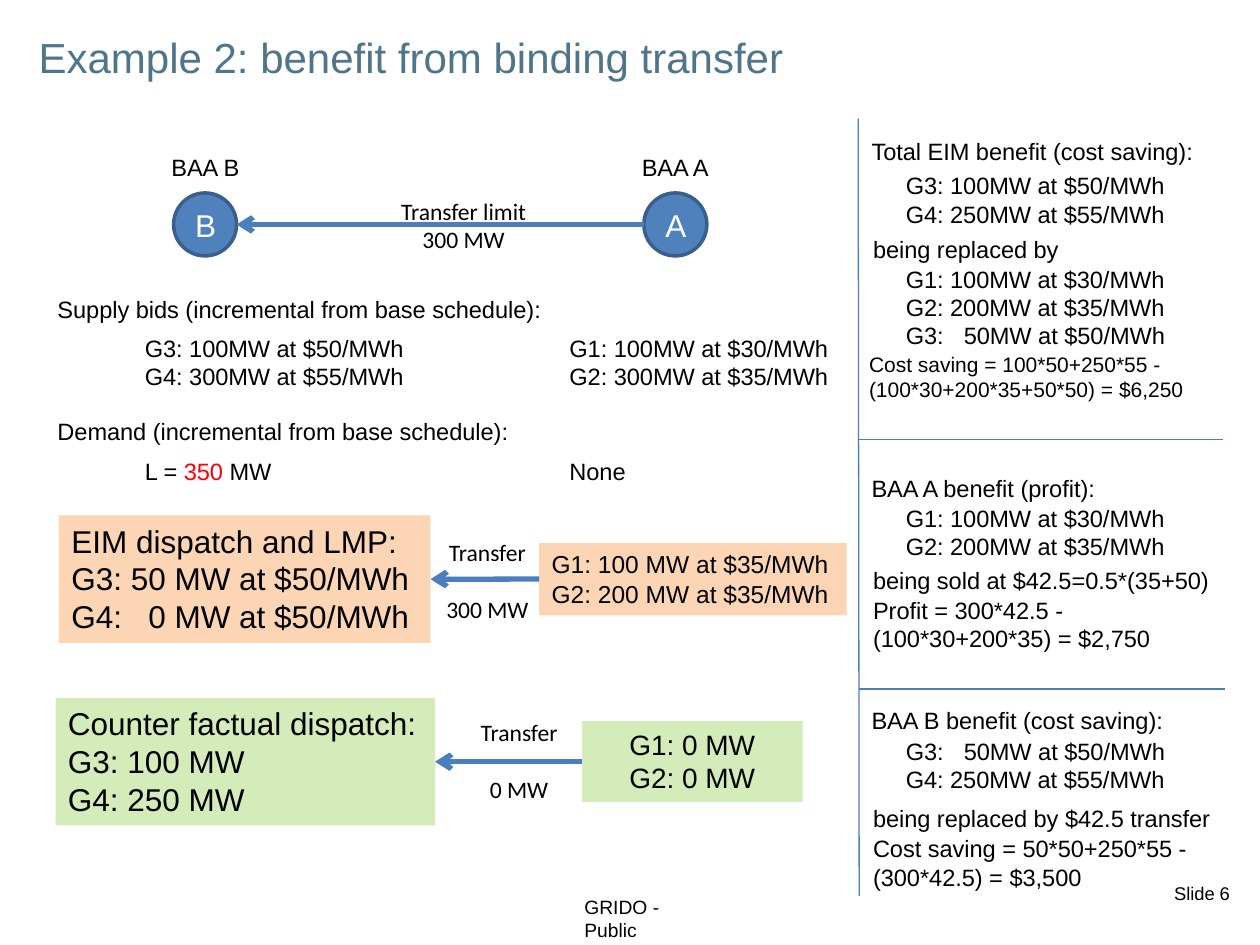
from dataclasses import dataclass

from lxml import etree
from pptx import Presentation
from pptx.dml.color import RGBColor
from pptx.enum.shapes import MSO_CONNECTOR, MSO_SHAPE
from pptx.enum.text import MSO_ANCHOR, MSO_AUTO_SIZE, PP_ALIGN
from pptx.oxml.ns import qn
from pptx.util import Cm, Pt

LEFT, CENTER = PP_ALIGN.LEFT, PP_ALIGN.CENTER
TOP, MIDDLE = MSO_ANCHOR.TOP, MSO_ANCHOR.MIDDLE
GROW = MSO_AUTO_SIZE.SHAPE_TO_FIT_TEXT
RECT, OVAL = MSO_SHAPE.RECTANGLE, MSO_SHAPE.OVAL
STRAIGHT = MSO_CONNECTOR.STRAIGHT
LEFT_SIDE, RIGHT_SIDE = 1, 3

BLACK = RGBColor(0x00, 0x00, 0x00)
WHITE = RGBColor(0xFF, 0xFF, 0xFF)
RED = RGBColor(0xFF, 0x00, 0x00)
TITLE_COLOR = RGBColor(0x4F, 0x75, 0x8B)
NODE_FILL = RGBColor(0x4F, 0x81, 0xBD)
NODE_EDGE = RGBColor(0x3A, 0x5F, 0x8C)
LINE_COLOR = RGBColor(0x4B, 0x7E, 0xBC)
ORANGE = RGBColor(0xFC, 0xD5, 0xB5)
GREEN = RGBColor(0xD3, 0xEC, 0xB9)

BAA_B_X, BAA_A_X = 2.67, 11.23
HEAD_X, NOTE_X, BID_X = 17.32, 17.35, 18.01
ONE_LINE, TWO_LINES = 0.84, 1.42
NODE_SIZE, NODE_TOP = 1.27, 3.89


@dataclass
class Label:
    """A block of text; places in cm, one paragraph per line of text."""
    text: str
    x: float
    y: float
    w: float
    h: float = ONE_LINE
    size: float = 13.5
    align: PP_ALIGN = LEFT
    font: str = "Arial"
    color: RGBColor = BLACK
    red: str = ""
    gap: float = 0
    tab: float = 1.17
    wrap: bool = True


@dataclass
class Dispatch:
    baa_b: Label
    baa_a: Label
    transfer: Label
    fill: RGBColor


def bids(text: str, x: float, y: float, h: float = TWO_LINES) -> Label:
    return Label(text, x, y, 6.2, h)


def transfer(amount: str, x: float, y: float, w: float) -> Label:
    return Label(f"Transfer\n{amount}", x, y, w, 1.98, align=CENTER,
                 font="Calibri", gap=16.5)


LABELS = [
    Label("GRIDO - Public", 11.53, 17.93, 3.15, 0.74, 11, wrap=False),
    Label("Slide 6", 23.42, 17.65, 1.98, 0.74, 10.5, wrap=False),
    Label("Example 2: benefit from binding transfer", 0.53, 0.51, 16.31, 1.27,
          24, color=TITLE_COLOR),
    Label("Transfer limit 300 MW", 7.54, 3.84, 3.61, TWO_LINES,
          align=CENTER, font="Calibri"),
    Label("BAA B", 2.39, 2.95, 3.5, align=CENTER),
    Label("BAA A", 11.86, 2.95, 3.5, align=CENTER),
    Label("Supply bids (incremental from base schedule):", 0.91, 5.82, 11.33),
    bids("G3: 100MW at $50/MWh\nG4: 300MW at $55/MWh", BAA_B_X, 6.6),
    bids("G1: 100MW at $30/MWh\nG2: 300MW at $35/MWh", BAA_A_X, 6.6),
    Label("Demand (incremental from base schedule):", 0.91, 8.28, 10.72),
    Label("L = 350 MW", BAA_B_X, 9.09, 7.14, red="350"),
    Label("None", BAA_A_X, 9.09, 4.11),
    # Total benefit
    Label("Total EIM benefit (cost saving):", HEAD_X, 2.64, 7.01),
    bids("G3: 100MW at $50/MWh\nG4: 250MW at $55/MWh", BID_X, 3.33),
    Label("being replaced by", NOTE_X, 4.62, 7.01),
    bids("G1: 100MW at $30/MWh\nG2: 200MW at $35/MWh\nG3:\t50MW at $50/MWh",
         BID_X, 5.21, 2.57),
    Label("Cost saving = 100*50+250*55 -(100*30+200*35+50*50) = $6,250",
          17.27, 6.96, 7.57, 1.27, 12),
    # Benefit of BAA A
    Label("BAA A benefit (profit):", HEAD_X, 9.42, 7.01),
    bids("G1: 100MW at $30/MWh\nG2: 200MW at $35/MWh", BID_X, 10.03),
    Label("being sold at $42.5=0.5*(35+50)", NOTE_X, 11.28, 7.82),
    Label("Profit = 300*42.5 -(100*30+200*35) = $2,750",
          NOTE_X, 11.89, 7.01, TWO_LINES),
    # Benefit of BAA B
    Label("BAA B benefit (cost saving):", HEAD_X, 14.1, 7.01),
    bids("G3:\t50MW at $50/MWh\nG4: 250MW at $55/MWh", BID_X, 14.73),
    Label("being replaced by $42.5 transfer", NOTE_X, 16.08, 7.54),
    Label("Cost saving = 50*50+250*55 -(300*42.5) = $3,500",
          NOTE_X, 16.69, 7.01, TWO_LINES),
]

DISPATCHES = [
    Dispatch(
        Label("EIM dispatch and LMP:\nG3: 50 MW at $50/MWh\n"
              "G4:\t0 MW at $50/MWh", 1.19, 10.39, 7.49, 2.57, 18, tab=1.55),
        Label("G1: 100 MW at $35/MWh\nG2: 200 MW at $35/MWh",
              10.87, 10.95, 6.2, 1.45, 14),
        transfer("300 MW", 8.53, 10.72, 2.59), ORANGE),
    Dispatch(
        Label("Counter factual dispatch:\nG3: 100 MW\nG4: 250 MW",
              1.12, 14.07, 7.65, 2.57, 18),
        Label("G1: 0 MW\nG2: 0 MW", 11.73, 14.54, 4.45, 1.63, 16, CENTER),
        transfer("0 MW", 9.27, 14.35, 2.39), GREEN),
]

DIVIDERS = [
    (17.3, 2.39, 17.32, 18.06),
    (17.3, 8.86, 24.66, 8.86),
    (17.32, 13.89, 24.69, 13.89),
]


def write(tf, label: Label) -> None:
    tf.word_wrap = label.wrap
    for i, line in enumerate(label.text.split("\n")):
        p = tf.paragraphs[0] if i == 0 else tf.add_paragraph()
        p.alignment = label.align
        if i and label.gap:
            p.space_before = Pt(label.gap)
        if "\t" in line:
            tabs = etree.SubElement(p._p.get_or_add_pPr(), qn("a:tabLst"))
            etree.SubElement(tabs, qn("a:tab"), pos=str(Cm(label.tab)),
                             algn="l")
        parts = line.partition(label.red) if label.red else (line,)
        for part in parts:
            r = p.add_run()
            r.text = part
            r.font.name = label.font
            r.font.size = Pt(label.size)
            r.font.color.rgb = RED if part == label.red else label.color


def frame(label: Label) -> tuple[Cm, Cm, Cm, Cm]:
    return Cm(label.x), Cm(label.y), Cm(label.w), Cm(label.h)


def add_label(s, label: Label) -> None:
    tf = s.shapes.add_textbox(*frame(label)).text_frame
    tf.auto_size = GROW
    write(tf, label)


def add_shape(s, kind, label: Label, fill: RGBColor, anchor):
    sp = s.shapes.add_shape(kind, *frame(label))
    sp.shadow.inherit = False
    sp.fill.solid()
    sp.fill.fore_color.rgb = fill
    sp.line.fill.background()
    sp.text_frame.vertical_anchor = anchor
    write(sp.text_frame, label)
    return sp


def add_node(s, name: str, x: float) -> None:
    label = Label(name, x, NODE_TOP, NODE_SIZE, NODE_SIZE, 18, CENTER,
                  color=WHITE)
    sp = add_shape(s, OVAL, label, NODE_FILL, MIDDLE)
    sp.line.color.rgb = NODE_EDGE
    sp.line.width = Pt(2)


def add_line(s, x1: float, y1: float, x2: float, y2: float,
             width: float = 0.75, arrow: bool = False):
    """Draw a line, with an optional arrowhead at its start."""
    line = s.shapes.add_connector(STRAIGHT, Cm(x1), Cm(y1), Cm(x2), Cm(y2))
    line.line.color.rgb = LINE_COLOR
    line.line.width = Pt(width)
    if arrow:
        etree.SubElement(line.line._get_or_add_ln(), qn("a:headEnd"),
                         type="arrow")
    etree.SubElement(line._element.spPr, qn("a:effectLst"))
    return line


def add_dispatch(s, d: Dispatch) -> None:
    box_b, box_a = (add_shape(s, RECT, label, d.fill, TOP)
                    for label in (d.baa_b, d.baa_a))
    for box in (box_b, box_a):
        box.text_frame.auto_size = GROW
    y = d.baa_b.y + d.baa_b.h / 2
    arrow = add_line(s, d.baa_b.x + d.baa_b.w, y, d.baa_a.x, y, 3, True)
    arrow.begin_connect(box_b, RIGHT_SIDE)
    arrow.end_connect(box_a, LEFT_SIDE)
    add_label(s, d.transfer)


def main() -> None:
    prs = Presentation()
    prs.slide_width, prs.slide_height = Cm(25.4), Cm(19.05)
    s = prs.slides.add_slide(prs.slide_layouts[6])
    node_b, node_a = 3.5, 12.98
    add_node(s, "B", node_b)
    add_node(s, "A", node_a)
    y = NODE_TOP + NODE_SIZE / 2
    add_line(s, node_b + NODE_SIZE, y, node_a, y, 3, True)
    for label in LABELS:
        add_label(s, label)
    for dispatch in DISPATCHES:
        add_dispatch(s, dispatch)
    for divider in DIVIDERS:
        add_line(s, *divider)
    prs.save("out.pptx")


if __name__ == "__main__":
    main()
